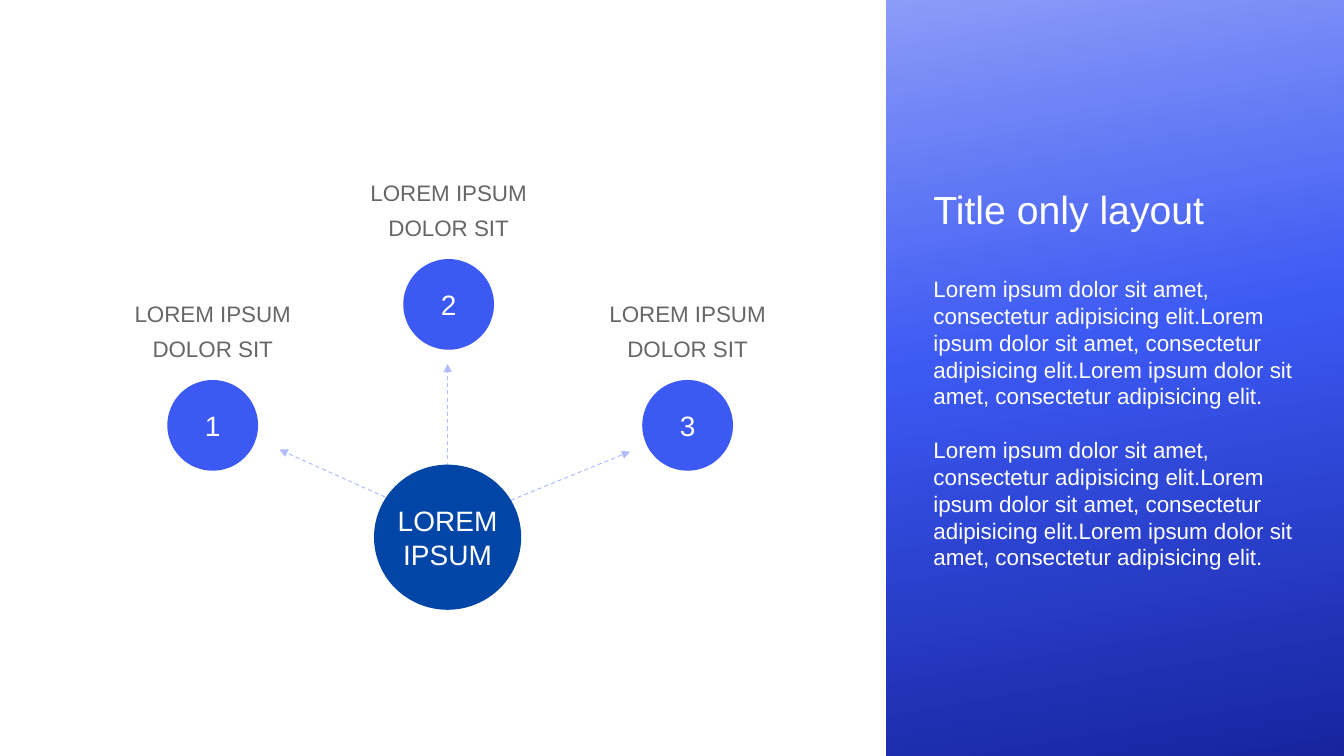
from dataclasses import dataclass

from lxml.etree import SubElement
from pptx import Presentation
from pptx.dml.color import RGBColor
from pptx.enum.dml import MSO_LINE
from pptx.enum.shapes import MSO_CONNECTOR, MSO_SHAPE
from pptx.enum.text import MSO_ANCHOR, PP_ALIGN
from pptx.oxml.ns import qn
from pptx.util import Inches, Pt


@dataclass(frozen=True)
class Theme:
    font: str = "Arial"
    white: str = "FFFFFF"
    grey: str = "666666"
    blue: str = "3C59F3"
    hub_blue: str = "0146A7"
    arrow_blue: str = "B1BDFA"
    panel_stops: tuple = ((0, "16249F"), (55, "3C59F3"), (100, "8A9BF8"))
    title_size: int = 28
    circle_size: int = 20
    body_size: int = 16


THEME = Theme()

BODY = " ".join(["Lorem ipsum dolor sit amet, consectetur adipisicing elit."] * 3).replace(
    ". ", "."
)
LABEL = "LOREM IPSUM DOLOR SIT"
# Number, horizontal centre, top of the circle
STEPS = [("1", 2.11, 3.77), ("2", 4.45, 2.57), ("3", 6.82, 3.77)]
ARROWS = [
    ((3.95, 4.99), (2.77, 4.46)),
    ((4.44, 4.63), (4.44, 3.61)),
    ((5, 4.99), (6.25, 4.48)),
]
STEP_DIAMETER = 0.9
LABEL_WIDTH, LABEL_HEIGHT = 2.01, 0.83
LABEL_RISE = 0.92


def write_text(frame, *paragraphs, size, color=THEME.white, align=PP_ALIGN.LEFT,
               line_spacing=None, gap=0, wrap=True):
    frame.word_wrap = wrap
    for index, text in enumerate(paragraphs):
        paragraph = frame.add_paragraph() if index else frame.paragraphs[0]
        paragraph.alignment = align
        paragraph.line_spacing = line_spacing
        if index:
            paragraph.space_before = Pt(gap)
        run = paragraph.add_run()
        run.text = text
        run.font.name = THEME.font
        run.font.size = Pt(size)
        run.font.color.rgb = RGBColor.from_string(color)


def add_text(slide, left, top, width, height, *paragraphs, **text_format):
    box = slide.shapes.add_textbox(Inches(left), Inches(top), Inches(width), Inches(height))
    write_text(box.text_frame, *paragraphs, **text_format)


def add_plain_shape(slide, kind, left, top, width, height):
    shape = slide.shapes.add_shape(
        kind, Inches(left), Inches(top), Inches(width), Inches(height))
    shape.shadow.inherit = False
    shape.line.fill.background()
    return shape


def add_circle(slide, left, top, width, height, text, fill, wrap=False):
    circle = add_plain_shape(slide, MSO_SHAPE.OVAL, left, top, width, height)
    circle.fill.solid()
    circle.fill.fore_color.rgb = RGBColor.from_string(fill)
    frame = circle.text_frame
    frame.vertical_anchor = MSO_ANCHOR.MIDDLE
    frame.margin_left = frame.margin_right = frame.margin_top = frame.margin_bottom = 0
    write_text(frame, text, size=THEME.circle_size, align=PP_ALIGN.CENTER, wrap=wrap)


def add_dashed_arrow(slide, start, end):
    arrow = slide.shapes.add_connector(
        MSO_CONNECTOR.STRAIGHT, *(Inches(value) for value in start + end))
    arrow.line.color.rgb = RGBColor.from_string(THEME.arrow_blue)
    arrow.line.width = Pt(0.75)
    arrow.line.dash_style = MSO_LINE.DASH
    SubElement(arrow.line._get_or_add_ln(), qn("a:tailEnd"), type="triangle")
    SubElement(arrow._element.spPr, qn("a:effectLst"))


def add_gradient_panel(slide, left, top, width, height):
    panel = add_plain_shape(slide, MSO_SHAPE.RECTANGLE, left, top, width, height)
    panel.fill.gradient()
    panel.fill.gradient_angle = 100
    stop_list = panel._element.spPr.find(qn("a:gradFill")).find(qn("a:gsLst"))
    for stop in list(stop_list):
        stop_list.remove(stop)
    for percent, color in THEME.panel_stops:
        stop = SubElement(stop_list, qn("a:gs"), pos=str(percent * 1000))
        SubElement(stop, qn("a:srgbClr"), val=color)


def add_step(slide, number, center, top):
    add_circle(slide, center - STEP_DIAMETER / 2, top, STEP_DIAMETER, STEP_DIAMETER,
               number, THEME.blue)
    add_text(slide, center - LABEL_WIDTH / 2, top - LABEL_RISE, LABEL_WIDTH, LABEL_HEIGHT,
             LABEL, size=THEME.body_size, color=THEME.grey, align=PP_ALIGN.CENTER,
             line_spacing=1.3)


def main():
    presentation = Presentation()
    presentation.slide_width = Inches(13.33)
    presentation.slide_height = Inches(7.5)
    slide = presentation.slides.add_slide(presentation.slide_layouts[6])

    for start, end in ARROWS:
        add_dashed_arrow(slide, start, end)
    for number, center, top in STEPS:
        add_step(slide, number, center, top)
    add_circle(slide, 3.71, 4.61, 1.46, 1.44, "LOREM IPSUM", THEME.hub_blue, wrap=True)

    add_gradient_panel(slide, 8.79, 0, 4.54, 7.5)
    add_text(slide, 9.16, 1.79, 3.82, 0.57, "Title only layout", size=THEME.title_size)
    add_text(slide, 9.16, 2.68, 3.82, 3.48, BODY, BODY, size=THEME.body_size, gap=19)

    presentation.save("out.pptx")


if __name__ == "__main__":
    main()
